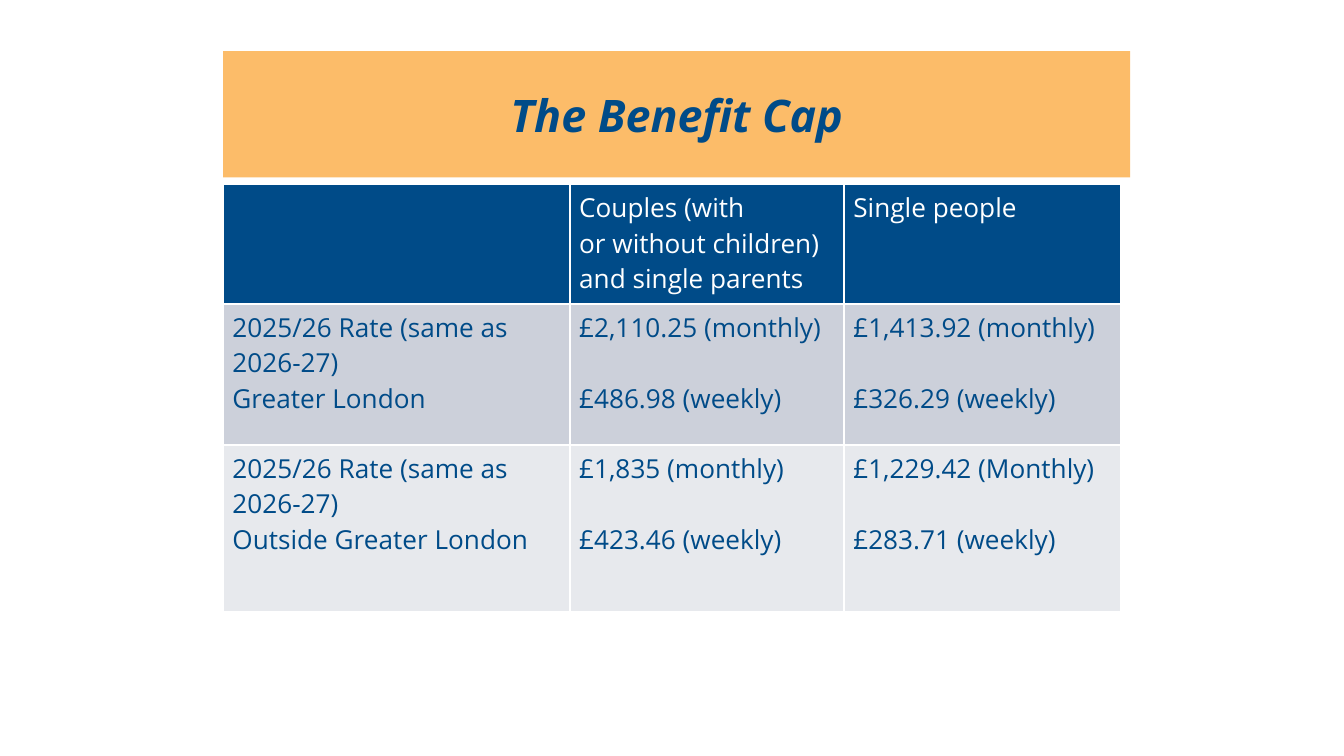
from lxml import etree
from pptx import Presentation
from pptx.dml.color import RGBColor
from pptx.enum.shapes import MSO_SHAPE
from pptx.enum.text import MSO_ANCHOR, PP_ALIGN
from pptx.oxml.ns import qn
from pptx.util import Inches, Pt

RECTANGLE = MSO_SHAPE.RECTANGLE
MIDDLE = MSO_ANCHOR.MIDDLE
CENTER = PP_ALIGN.CENTER
NO_BREAK = chr(160)

TITLE = "The Benefit Cap"
RATE = "2025/26 Rate (same as 2026-27)"
COUPLES = f"Couples (with or{NO_BREAK}without children) and{NO_BREAK}single parents"
ROWS = [
    [[], [COUPLES], ["Single people"]],
    [[RATE, "Greater London"],
     ["£2,110.25 (monthly)", "£486.98 (weekly)"],
     ["£1,413.92 (monthly)", "£326.29 (weekly)"]],
    [[RATE, "Outside Greater London"],
     ["£1,835 (monthly)", "£423.46 (weekly)"],
     ["£1,229.42 (Monthly)", "£283.71 (weekly)"]],
]

THEME = {
    "font": "Open Sans",
    "navy": "004B88",
    "white": "FFFFFF",
    "banner": "FCBC69",
    "row_fills": ["004B88", "CCD0DA", "E7E9ED"],
    "row_inks": ["FFFFFF", "004B88", "004B88"],
    "title_size": 24,
    "cell_size": 14,
    "amount_gap": 19,
}
LEFT = 1.66
COLUMN_WIDTHS = [2.58, 2.04, 2.06]
ROW_HEIGHTS = [0.89, 1.05, 1.24]
CELL_MARGINS = {"margin_left": 0.07, "margin_top": 0.04,
                "margin_right": 0.07, "margin_bottom": 0.04}


def write(para, text, size, color, **formats):
    span = para.add_run()
    span.text = text
    values = {"name": THEME["font"], "size": Pt(size), **formats}
    for name, value in values.items():
        setattr(span.font, name, value)
    span.font.color.rgb = RGBColor.from_string(color)


def add_borders(cell):
    properties = cell._tc.get_or_add_tcPr()
    for index, side in enumerate(("lnL", "lnR", "lnT", "lnB")):
        line = etree.Element(qn(f"a:{side}"), w=str(Pt(1)))
        fill = etree.SubElement(line, qn("a:solidFill"))
        etree.SubElement(fill, qn("a:srgbClr"), val=THEME["white"])
        properties.insert(index, line)


def add_title(page):
    box = page.shapes.add_shape(
        RECTANGLE, Inches(LEFT), Inches(0.38), Inches(6.75), Inches(0.94))
    box.shadow.inherit = False
    box.fill.solid()
    box.fill.fore_color.rgb = RGBColor.from_string(THEME["banner"])
    box.line.fill.background()
    box.text_frame.vertical_anchor = MIDDLE
    para = box.text_frame.paragraphs[0]
    para.alignment = CENTER
    write(para, TITLE, THEME["title_size"], THEME["navy"], bold=True, italic=True)


def fill_cell(cell, lines, fill, ink, gap):
    for name, value in CELL_MARGINS.items():
        setattr(cell, name, Inches(value))
    cell.fill.solid()
    cell.fill.fore_color.rgb = RGBColor.from_string(fill)
    add_borders(cell)
    for index, text in enumerate(lines):
        frame = cell.text_frame
        para = frame.add_paragraph() if index else frame.paragraphs[0]
        if index:
            para.space_before = Pt(gap)
        write(para, text, THEME["cell_size"], ink)


def add_rates(page):
    table = page.shapes.add_table(
        len(ROWS), len(COLUMN_WIDTHS), Inches(LEFT), Inches(1.37),
        Inches(sum(COLUMN_WIDTHS)), Inches(sum(ROW_HEIGHTS))).table
    table.horz_banding = False
    table.first_row = False
    for column, width in zip(table.columns, COLUMN_WIDTHS):
        column.width = Inches(width)
    for row, height, cells, fill, ink in zip(
            table.rows, ROW_HEIGHTS, ROWS, THEME["row_fills"], THEME["row_inks"]):
        row.height = Inches(height)
        for index, (cell, lines) in enumerate(zip(row.cells, cells)):
            gap = THEME["amount_gap"] if index else 0
            fill_cell(cell, lines, fill, ink, gap)


def main():
    deck = Presentation()
    deck.slide_width = Inches(10)
    deck.slide_height = deck.slide_width * 9 // 16
    page = deck.slides.add_slide(deck.slide_layouts[6])
    add_title(page)
    add_rates(page)
    deck.save("out.pptx")


if __name__ == "__main__":
    main()
